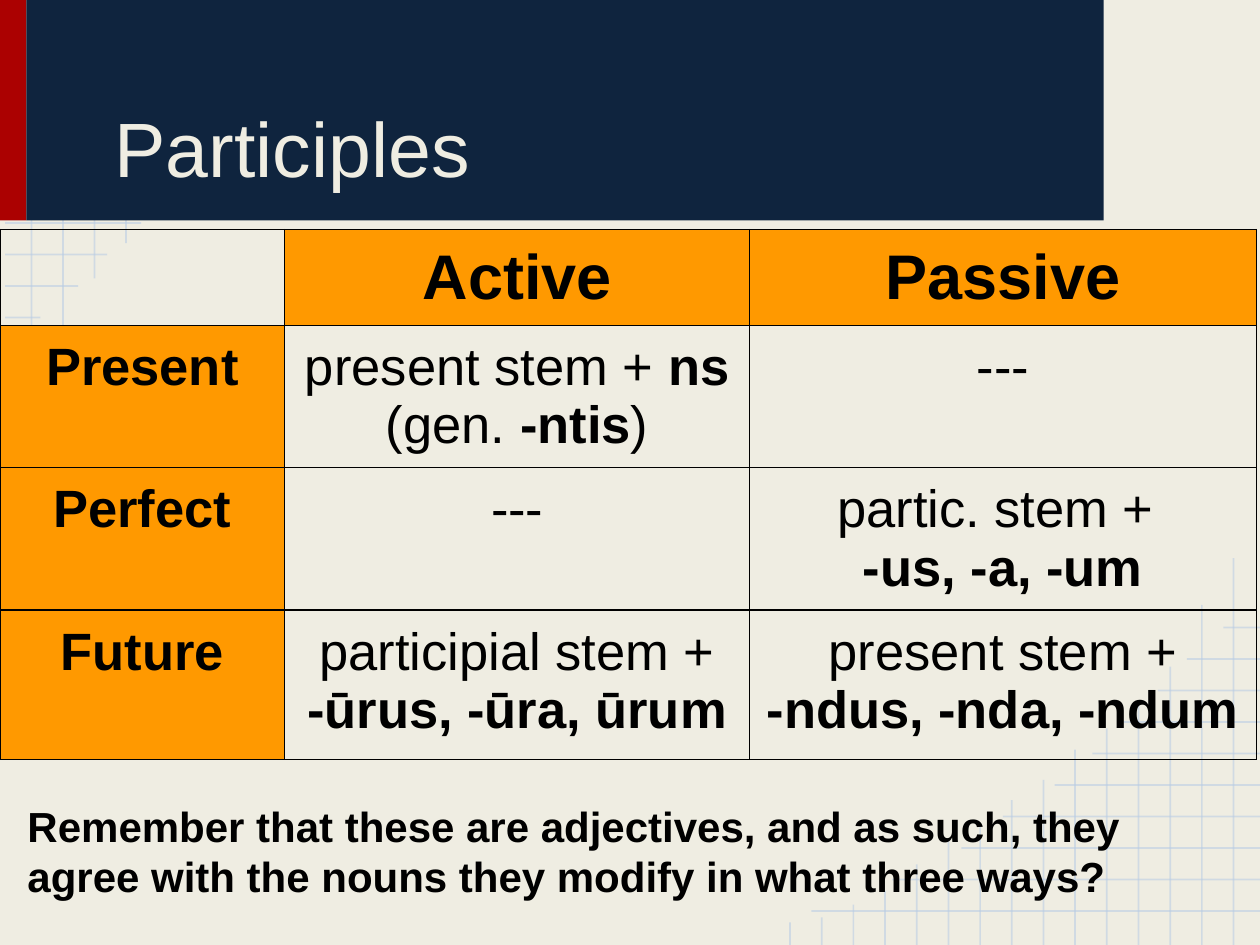
from itertools import accumulate
from lxml.etree import SubElement
from pptx import Presentation
from pptx.dml.color import RGBColor
from pptx.enum.shapes import MSO_CONNECTOR, MSO_SHAPE
from pptx.enum.text import MSO_ANCHOR, MSO_AUTO_SIZE, PP_ALIGN
from pptx.oxml.ns import qn
from pptx.util import Pt

PX = 9144  # EMU per px, 100 px to the inch

# Content: a cell is a list of paragraphs, a paragraph a list of (text, bold)
TITLE = "Participles"
HEADERS = ["Active", "Passive"]
ROWS = [
    ("Present",
     [[("present stem + ", False), ("ns ", True), ("(gen. ", False),
       ("-ntis", True), (")", False)]],
     [[("---", False)]]),
    ("Perfect",
     [[("---", False)]],
     [[("partic. stem + ", False)], [("-us, -a, -um", True)]]),
    ("Future",
     [[("participial stem + ", False), ("-ūrus, -ūra, ūrum", True)]],
     [[("present stem + ", False), ("-ndus, -nda, -ndum", True)]]),
]
NOTE = ("Remember that these are adjectives, and as such, they agree with "
        "the nouns they modify in what three ways?")

THEME = {
    "font": "Arial",
    "paper": "EFEDE2", "navy": "0F243E", "red": "AB0101",
    "orange": "FF9900", "ink": "000000", "grid": "B7CCE4",
    "title": 44, "header": 36, "cell": 30, "note": 24,
}

# Layout in px
COLS = [226, 369, 402]
ROW_HEIGHTS = [73, 108, 107, 119]
INSET = 10
PITCH = 25
LEFT_ROW_ENDS = [112, 85, 62, 32]
LEFT_COL_ENDS = [307, 270, 221, 193]
RIGHT_ROW_STARTS = [644, 708, 763, 796, 837, 867, 892, 919, 942, 971]
RIGHT_COL_STARTS = [443, 480, 529, 557, 578, 595, 619, 635,
                    654, 668, 686, 707, 718, 728, 732]
RIGHT_COL_PITCH = 25.14


def px(*values):
    return [round(v * PX) for v in values]


def color(name):
    return RGBColor.from_string(THEME[name])


def style(r, size, ink="ink", bold=False):
    r.font.name = THEME["font"]
    r.font.size = Pt(THEME[size])
    r.font.color.rgb = color(ink)
    r.font.bold = bold


def set_insets(box):
    box.margin_left = box.margin_right = px(INSET)[0]
    box.margin_top = box.margin_bottom = px(INSET)[0]


def grid_line(s, x1, y1, x2, y2):
    line = s.shapes.add_connector(MSO_CONNECTOR.STRAIGHT, *px(x1, y1, x2, y2))
    line.line.width = Pt(1)
    line.line.color.rgb = color("grid")
    rgb = line.line._ln.find(".//" + qn("a:srgbClr"))
    SubElement(rgb, qn("a:alpha"), val="54000")
    SubElement(line._element.spPr, qn("a:effectLst"))


def band(s, x, y, w, h, fill):
    sp = s.shapes.add_shape(MSO_SHAPE.RECTANGLE, *px(x, y, w, h))
    sp.shadow.inherit = False
    sp.fill.solid()
    sp.fill.fore_color.rgb = color(fill)
    sp.line.fill.background()


def add_borders(cell):
    tc_pr = cell._tc.get_or_add_tcPr()
    for side in ("lnL", "lnR", "lnT", "lnB"):
        ln = SubElement(tc_pr, qn("a:" + side), w=str(Pt(0.75)))
        fill = SubElement(ln, qn("a:solidFill"))
        SubElement(fill, qn("a:srgbClr"), val=THEME["ink"])


def fill_cell(cell, paragraphs, size, shaded):
    set_insets(cell)
    add_borders(cell)
    if shaded:
        cell.fill.solid()
        cell.fill.fore_color.rgb = color("orange")
    else:
        cell.fill.background()
    tf = cell.text_frame
    for i, runs in enumerate(paragraphs):
        p = tf.add_paragraph() if i else tf.paragraphs[0]
        p.alignment = PP_ALIGN.CENTER
        for text, bold in runs:
            r = p.add_run()
            r.text = text
            style(r, size, bold=bold)


def main():
    prs = Presentation()
    prs.slide_width, prs.slide_height = px(1000, 750)
    s = prs.slides.add_slide(prs.slide_layouts[5])
    s.background.fill.solid()
    s.background.fill.fore_color.rgb = color("paper")

    # Grid in the left corner, below the bands
    for i, end in enumerate(LEFT_ROW_ENDS):
        grid_line(s, 4, 177 + PITCH * i, end, 177 + PITCH * i)
    for i, end in enumerate(LEFT_COL_ENDS, 1):
        grid_line(s, PITCH * i, end, PITCH * i, 0)

    # Grid in the bottom right corner
    for i, start in enumerate(RIGHT_ROW_STARTS):
        grid_line(s, 1000, 723 - PITCH * i, start, 723 - PITCH * i)
    for i, start in enumerate(RIGHT_COL_STARTS):
        x = 979 - RIGHT_COL_PITCH * i
        grid_line(s, x, start, x, 750)

    # Title bands
    band(s, 0, -1, 21, 176, "red")
    band(s, 21, -1, 855, 176, "navy")

    # Title, brought in front of the bands
    title = s.shapes.title
    s.shapes._spTree.append(title._element)
    title.left, title.top, title.width, title.height = px(50, 15, 800, 148)
    tf = title.text_frame
    tf.text = TITLE
    tf.auto_size = MSO_AUTO_SIZE.NONE
    tf.vertical_anchor = MSO_ANCHOR.BOTTOM
    set_insets(tf)
    p = tf.paragraphs[0]
    p.alignment = PP_ALIGN.LEFT
    p._p.get_or_add_pPr().set("indent", str(31 * PX))
    style(p.runs[0], "title", "paper")

    # Table of participles
    *_, width = accumulate(COLS)
    *_, height = accumulate(ROW_HEIGHTS)
    table = s.shapes.add_table(len(ROW_HEIGHTS), len(COLS),
                               *px(0, 182, width, height)).table
    table.first_row = table.horz_banding = False
    for col, w in zip(table.columns, px(*COLS)):
        col.width = w
    for row, h in zip(table.rows, px(*ROW_HEIGHTS)):
        row.height = h
    fill_cell(table.cell(0, 0), [], "cell", False)
    for c, header in enumerate(HEADERS, 1):
        fill_cell(table.cell(0, c), [[(header, True)]], "header", True)
    for r, (tense, *forms) in enumerate(ROWS, 1):
        fill_cell(table.cell(r, 0), [[(tense, True)]], "cell", True)
        for c, form in enumerate(forms, 1):
            fill_cell(table.cell(r, c), form, "cell", False)

    # Closing question
    tf = s.shapes.add_textbox(*px(12, 625, 964, 106)).text_frame
    tf.word_wrap = True
    set_insets(tf)
    tf.text = NOTE
    style(tf.paragraphs[0].runs[0], "note", bold=True)

    prs.save("out.pptx")


if __name__ == "__main__":
    main()
